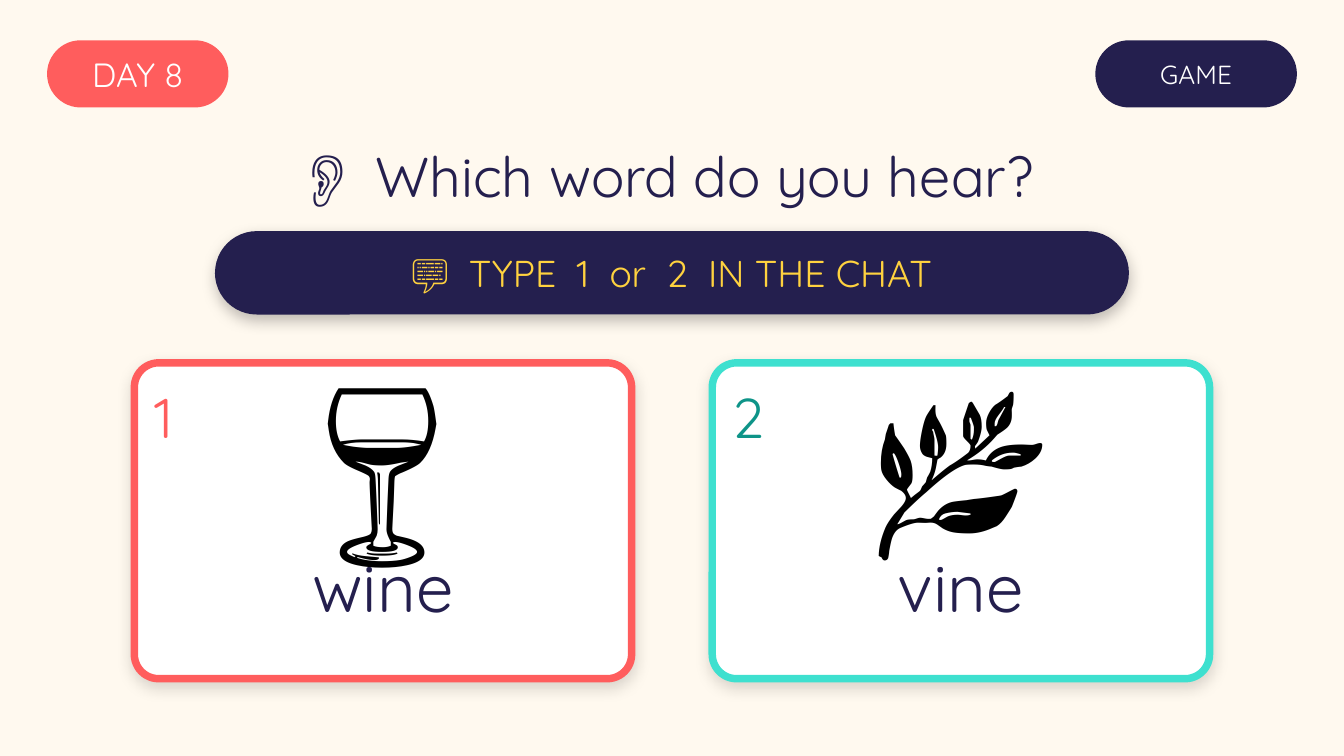
import pptx
import pptx.dml.color
import pptx.enum.shapes
import pptx.enum.text
import pptx.oxml
import pptx.oxml.ns
import pptx.util

Pt = pptx.util.Pt
RGBColor = pptx.dml.color.RGBColor
PP_ALIGN = pptx.enum.text.PP_ALIGN
MSO_ANCHOR = pptx.enum.text.MSO_ANCHOR

CREAM = RGBColor(0xFF, 0xF9, 0xEF)
CORAL = RGBColor(0xFF, 0x5D, 0x5D)
NAVY = RGBColor(0x24, 0x1F, 0x4E)
YELLOW = RGBColor(0xFF, 0xD2, 0x3F)
TURQUOISE = RGBColor(0x3E, 0xE0, 0xCF)
TEAL = RGBColor(0x0E, 0x94, 0x88)
WHITE = RGBColor(0xFF, 0xFF, 0xFF)
BLACK = RGBColor(0x00, 0x00, 0x00)


class GameSlide:
    font = "Quicksand"
    emoji_font = "Calibri"

    def __init__(self, deck):
        self.slide = deck.slides.add_slide(deck.slide_layouts[6])
        self.slide.background.fill.solid()
        self.slide.background.fill.fore_color.rgb = CREAM

    def text(self, box, words, size, color, font=None, inset=None,
             align=PP_ALIGN.CENTER, anchor=MSO_ANCHOR.MIDDLE):
        frame = self.slide.shapes.add_textbox(*map(Pt, box)).text_frame
        frame.word_wrap = True
        frame.vertical_anchor = anchor
        if inset is not None:
            frame.margin_left = frame.margin_right = Pt(inset)
            frame.margin_top = frame.margin_bottom = Pt(inset)
        paragraph = frame.paragraphs[0]
        paragraph.alignment = align
        run = paragraph.add_run()
        run.text = words
        run.font.name = font or self.font
        run.font.size = Pt(size)
        run.font.color.rgb = color

    def rounded(self, box, fill, radius, border=None, shadow_alpha=0):
        panel = self.slide.shapes.add_shape(
            pptx.enum.shapes.MSO_SHAPE.ROUNDED_RECTANGLE, *map(Pt, box))
        panel.adjustments[0] = radius
        panel.fill.solid()
        panel.fill.fore_color.rgb = fill
        if border is None:
            panel.line.fill.background()
        else:
            panel.line.color.rgb = border
            panel.line.width = Pt(4)
        panel.shadow.inherit = False
        if shadow_alpha:
            self.add_shadow(panel, shadow_alpha)

    def add_shadow(self, panel, alpha):
        effects = panel._element.spPr.find(pptx.oxml.ns.qn("a:effectLst"))
        effects.append(pptx.oxml.parse_xml(
            f'<a:outerShdw {pptx.oxml.ns.nsdecls("a")} blurRad="{Pt(8)}" '
            f'dist="{Pt(3)}" dir="5400000" algn="bl" rotWithShape="0">'
            f'<a:srgbClr val="{BLACK}"><a:alpha val="{alpha * 1000}"/>'
            '</a:srgbClr></a:outerShdw>'))

    def pill(self, box, words, size, fill, color, shadow_alpha=0):
        self.rounded(box, fill, 0.5, shadow_alpha=shadow_alpha)
        self.text(box, words, size, color, inset=0)

    def card(self, left, number, emoji, word, border, number_color):
        width = 266.4
        self.rounded((left, 194.4, width, 169.2), WHITE, 0.077, border, 15)
        self.text((left + 10.8, 201.6, 57.6, 43.2), number, 30, number_color,
                  inset=0, align=PP_ALIGN.LEFT)
        self.text((left, 178.56, width, 108), emoji, 103, BLACK,
                  font=self.emoji_font, anchor=MSO_ANCHOR.TOP)
        self.text((left, 291.6, width, 44.64), word, 36, NAVY)


def main():
    deck = pptx.Presentation()
    deck.slide_width, deck.slide_height = Pt(720), Pt(405)
    game = GameSlide(deck)
    game.pill((25.2, 21.6, 97.2, 36), "DAY 8", 18, CORAL, WHITE)
    game.pill((586.8, 21.6, 108, 36), "GAME", 14, NAVY, WHITE)
    game.text((0, 68.4, 720, 50.4), "👂  Which word do you hear?", 30, NAVY)
    game.pill((115.2, 123.84, 489.6, 44.64), "💬  TYPE  1  or  2  IN THE CHAT",
              20, NAVY, YELLOW, shadow_alpha=25)
    choices = [("1", "🍷", "wine", CORAL, CORAL),
               ("2", "🌿", "vine", TURQUOISE, TEAL)]
    for column, choice in enumerate(choices):
        game.card(72 + column * 309.6, *choice)
    deck.save("out.pptx")


if __name__ == "__main__":
    main()
